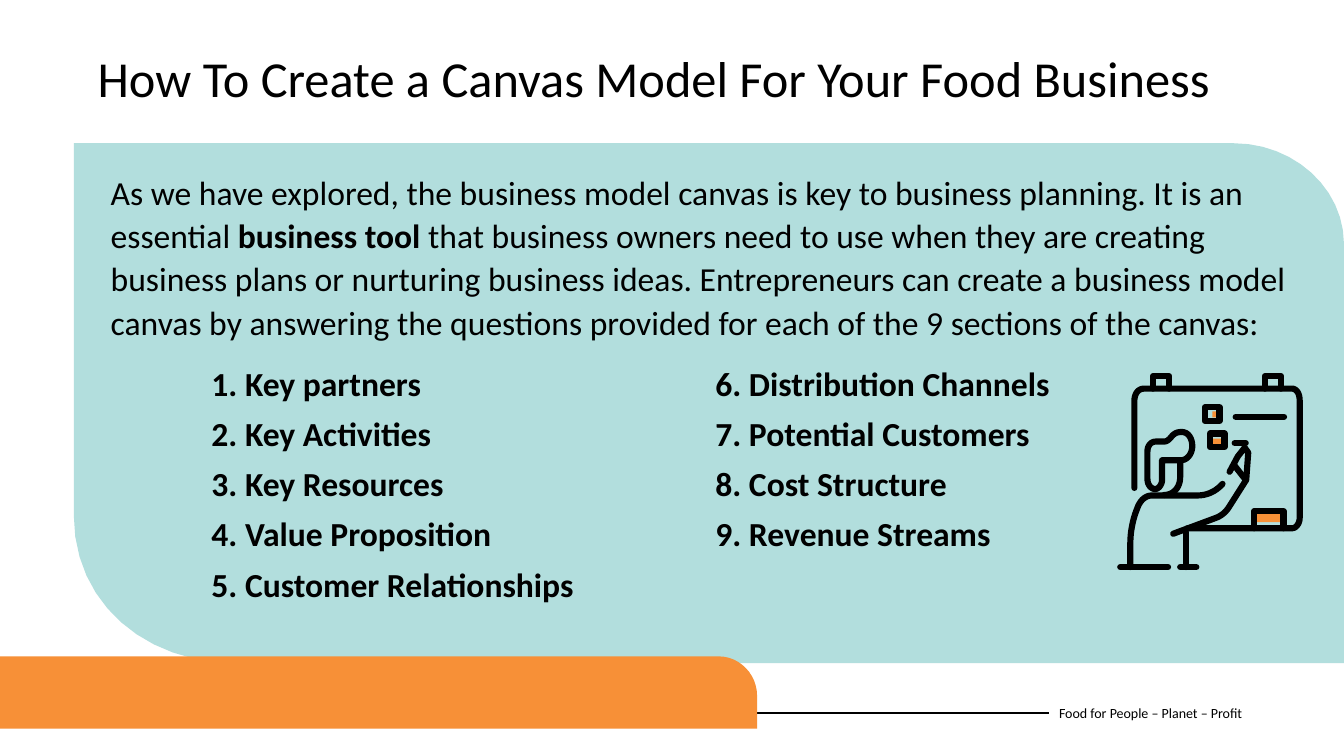
from dataclasses import dataclass
from itertools import zip_longest

from lxml import etree
from pptx import Presentation
from pptx.dml.color import RGBColor
from pptx.enum.shapes import MSO_CONNECTOR, MSO_SHAPE
from pptx.enum.text import MSO_ANCHOR
from pptx.oxml.ns import qn
from pptx.util import Cm, Pt

RECTANGLE = MSO_SHAPE.RECTANGLE
STRAIGHT = MSO_CONNECTOR.STRAIGHT
TOP, MIDDLE = MSO_ANCHOR.TOP, MSO_ANCHOR.MIDDLE

BLACK = RGBColor(0x00, 0x00, 0x00)
WHITE = RGBColor(0xFF, 0xFF, 0xFF)
TEAL = RGBColor(0xB2, 0xDE, 0xDD)
ORANGE = RGBColor(0xF7, 0x90, 0x37)

FONT = "Calibri"
CURVE_STEPS = 12
LEFT_SIDE = 1
TAB_STOPS = (Cm(2.54), Cm(15.24))

# A step of two numbers is a corner; six numbers are a cubic curve.
Step = tuple[float, ...]
Contour = list[Step]


@dataclass(frozen=True)
class Grid:
    left: float
    top: float
    unit: float


@dataclass(frozen=True)
class Panel:
    color: RGBColor
    contour: Contour


@dataclass(frozen=True)
class TextArea:
    left: float
    top: float
    width: float
    height: float
    anchor: MSO_ANCHOR = TOP


PAGE_GRID = Grid(0, 0, Cm(1))
ICON_GRID = Grid(Cm(27.94), Cm(9.4), Cm(2.54) / 100)
ICON_STROKE = Pt(4.4)

PANELS = [
    Panel(TEAL, [(1.86, 3.61), (31.09, 3.61), (32.61, 3.61, 33.87, 4.75, 33.87, 6.15),
                 (33.87, 16.71), (5.94, 16.71), (3.68, 16.71, 1.86, 15.21, 1.86, 12.98),
                 (1.86, 3.61)]),
    Panel(ORANGE, [(0, 16.54), (18.11, 16.54), (18.64, 16.54, 19.08, 16.99, 19.08, 17.53),
                   (19.08, 18.36), (0, 18.36), (0, 16.54)]),
]

TITLE_AREA = TextArea(2.21, 1.24, 29.44, 2.24)
BODY_AREA = TextArea(2.54, 4.14, 31.06, 11.4)
FOOTER_AREA = TextArea(26.44, 17.45, 6.93, 1.02, MIDDLE)

TITLE = "How To Create a Canvas Model For Your Food Business"
FOOTER = "Food for People – Planet – Profit"
INTRO = [
    ("As we have explored, the business model canvas is key to business planning. "
     "It is an essential ", False),
    ("business tool ", True),
    ("that business owners need to use when they are creating business plans or "
     "nurturing business ideas. Entrepreneurs can create a business model canvas by "
     "answering the questions provided for each of the 9 sections of the canvas:", False),
]
SECTIONS = ["Key partners", "Key Activities", "Key Resources", "Value Proposition",
            "Customer Relationships", "Distribution Channels", "Potential Customers",
            "Cost Structure", "Revenue Streams"]
FIRST_COLUMN = 5

# Icon: accents as left, top, width, height; strokes as contours
ACCENTS = [(147, 138, 24, 10), (103, 38, 9, 6), (103, 65, 9, 6)]
BOARD = [
    [(25.5, 114), (25.5, 28), (25.5, 21, 29, 15.5, 35, 15.5), (182, 15.5),
     (186, 15.5, 189.5, 20, 189.5, 27), (189.5, 144),
     (189.5, 149, 186, 154, 182, 154), (78, 154)],
    [(144.5, 154), (144.5, 137), (173.5, 137), (173.5, 154)],
    *([(left, 15.5), (left, 3), (left + 16, 3), (left + 16, 15.5)] for left in (44, 155)),
]
ARM = [
    [(64, 159.5), (107, 143.5), (113, 141, 117, 137, 120, 132), (136.5, 106),
     (138.5, 79), (135, 74), (128, 83), (120, 98)],
    [(125, 69.5), (136, 69.5)],
    [(125, 92), (136, 106)],
    [(77, 158), (77, 192.5)],
    [(71, 192.5), (87, 192.5)],
]
PERSON = [
    [(11.5, 192.5), (59, 192.5)],
    [(21.5, 192.5), (21.5, 170), (21.5, 157, 24, 145, 28.5, 134),
     (31, 127, 36, 121.5, 43, 121.5), (88, 121.5), (97, 121.5, 106, 118, 113, 110)],
    [(45, 115), (41, 114, 38.5, 110, 38.5, 105), (38.5, 78), (38.5, 72, 42, 68, 47, 68),
     (55, 68), (58, 68, 60, 66, 62.5, 63), (65, 60, 68, 58.5, 72.5, 58.5),
     (79, 58.5, 83, 65, 83, 72.5), (83, 80, 78, 86.5, 72, 86.5), (53, 86.5),
     (53, 106), (53, 111, 49, 116, 45, 115)],
    [(71, 86.5), (71, 103), (71, 114, 64, 121, 55, 121)],
]
NOTES = [
    [(x, y), (x + 14.5, y), (x + 14.5, y + 13.5), (x, y + 13.5), (x, y)]
    for x, y in ((95.5, 34), (100.5, 60))
]
WRITING = [[(126, 43.5), (174, 43.5)]]


def flatten(contour: Contour, grid: Grid) -> list[tuple[int, int]]:
    """Turn corners and curves into slide points."""
    points = [contour[0]]
    for step in contour[1:]:
        if len(step) == 2:
            points.append(step)
            continue
        x0, y0 = points[-1]
        x1, y1, x2, y2, x3, y3 = step
        for index in range(1, CURVE_STEPS + 1):
            t = index / CURVE_STEPS
            a, b, c, d = (1 - t) ** 3, 3 * t * (1 - t) ** 2, 3 * t * t * (1 - t), t ** 3
            points.append((a * x0 + b * x1 + c * x2 + d * x3,
                           a * y0 + b * y1 + c * y2 + d * y3))
    return [(round(grid.left + x * grid.unit), round(grid.top + y * grid.unit))
            for x, y in points]


def build_outline(shapes, contours: list[Contour], grid: Grid, close: bool):
    first, *others = [flatten(contour, grid) for contour in contours]
    builder = shapes.build_freeform(*first[0])
    builder.add_line_segments(first[1:], close=close)
    for points in others:
        builder.move_to(*points[0])
        builder.add_line_segments(points[1:], close=close)
    outline = builder.convert_to_shape()
    outline.shadow.inherit = False
    return outline


def paint(shape, color: RGBColor) -> None:
    shape.shadow.inherit = False
    shape.fill.solid()
    shape.fill.fore_color.rgb = color
    shape.line.fill.background()


def draw_strokes(shapes, contours: list[Contour]) -> None:
    strokes = build_outline(shapes, contours, ICON_GRID, close=False)
    strokes.fill.background()
    strokes.line.color.rgb = BLACK
    strokes.line.width = ICON_STROKE
    line = strokes.line._get_or_add_ln()
    line.set("cap", "rnd")
    etree.SubElement(line, qn("a:round"))


def add_text_area(shapes, area: TextArea):
    box = shapes.add_textbox(Cm(area.left), Cm(area.top), Cm(area.width), Cm(area.height))
    box.text_frame.word_wrap = True
    box.text_frame.vertical_anchor = area.anchor
    return box


def write(paragraph, text: str, size: float, bold: bool = False, **spacing) -> None:
    for name, value in spacing.items():
        setattr(paragraph, name, value)
    run = paragraph.add_run()
    run.text = text
    for name, value in {"name": FONT, "size": Pt(size), "bold": bold}.items():
        setattr(run.font, name, value)
    run.font.color.rgb = BLACK


def set_tab_stops(paragraph) -> None:
    stops = etree.SubElement(paragraph._p.get_or_add_pPr(), qn("a:tabLst"))
    for position in TAB_STOPS:
        etree.SubElement(stops, qn("a:tab"), pos=str(int(position)), algn="l")


def main() -> None:
    presentation = Presentation()
    presentation.slide_width, presentation.slide_height = Cm(33.87), Cm(19.05)
    slide = presentation.slides.add_slide(presentation.slide_layouts[6])
    slide.background.fill.solid()
    slide.background.fill.fore_color.rgb = WHITE
    shapes = slide.shapes

    # Footer with its rule
    footer = add_text_area(shapes, FOOTER_AREA)
    write(footer.text_frame.paragraphs[0], FOOTER, 10)
    rule = shapes.add_connector(STRAIGHT, 0, Cm(17.96), Cm(26.44), Cm(17.96))
    rule.end_connect(footer, LEFT_SIDE)
    rule.line.color.rgb = BLACK
    rule.line.width = Pt(1.5)
    etree.SubElement(rule._element.spPr, qn("a:effectLst"))

    # Coloured panels
    for panel in PANELS:
        paint(build_outline(shapes, [panel.contour], PAGE_GRID, close=True), panel.color)

    # Introduction and the nine sections in two columns
    body = add_text_area(shapes, BODY_AREA).text_frame
    for text, bold in INTRO:
        write(body.paragraphs[0], text, 24, bold,
              line_spacing=1.07, space_before=Pt(10), space_after=Pt(8))
    numbered = [f"{number}. {name}" for number, name in enumerate(SECTIONS, 1)]
    for row in zip_longest(numbered[:FIRST_COLUMN], numbered[FIRST_COLUMN:]):
        paragraph = body.add_paragraph()
        write(paragraph, "".join(f"\t{entry}" for entry in row if entry), 24, True,
              line_spacing=0.9, space_before=Pt(10))
        set_tab_stops(paragraph)

    # Title
    title = add_text_area(shapes, TITLE_AREA).text_frame
    write(title.paragraphs[0], TITLE, 36, line_spacing=0.9, space_before=Pt(10))

    # Icon of a person writing on a board
    for x, y, width, height in ACCENTS:
        unit = ICON_GRID.unit
        paint(shapes.add_shape(RECTANGLE, round(ICON_GRID.left + x * unit),
                               round(ICON_GRID.top + y * unit),
                               round(width * unit), round(height * unit)), ORANGE)
    for contours in (BOARD + ARM, PERSON, *([note] for note in NOTES), WRITING):
        draw_strokes(shapes, contours)

    presentation.save("out.pptx")


if __name__ == "__main__":
    main()
